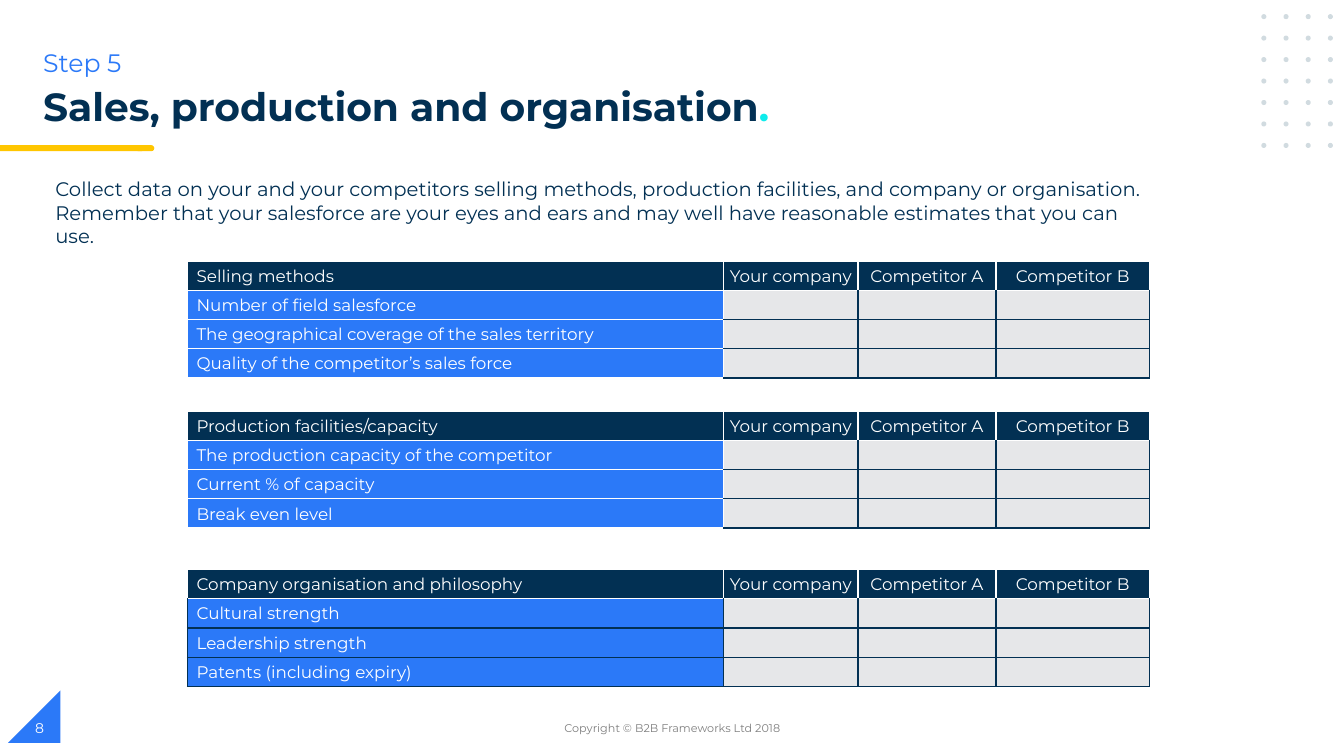
from lxml import etree
from pptx import Presentation
from pptx.dml.color import RGBColor
from pptx.enum import shapes, text
from pptx.oxml import ns
from pptx.util import Inches, Pt

FONT = "Montserrat"
NAVY, BLUE, WHITE, GREY = "023053", "2B79F8", "FFFFFF", "E6E7E9"
YELLOW, CYAN, DOT, FOOTER = "FFC600", "0EECEC", "D1DBE0", "7F7F7F"
COLUMNS = [5.32, 1.33, 1.37, 1.52]
ROW_HEIGHT = 0.29
COMPANIES = ["Your company", "Competitor A", "Competitor B"]


def rgb(colour):
    return RGBColor.from_string(colour)


def add_run(p, words, size, colour, bold=False):
    r = p.add_run()
    r.text = words
    r.font.name, r.font.size, r.font.bold = FONT, Pt(size), bold
    r.font.color.rgb = rgb(colour)


def add_shape(s, kind, x, y, w, h, colour):
    sp = s.shapes.add_shape(kind, Inches(x), Inches(y), Inches(w), Inches(h))
    sp.shadow.inherit = False
    sp.fill.solid()
    sp.fill.fore_color.rgb = rgb(colour)
    sp.line.fill.background()
    return sp


def add_text(s, x, y, w, h, runs, align=text.PP_ALIGN.LEFT,
             anchor=text.MSO_ANCHOR.TOP, spacing=None):
    tf = s.shapes.add_textbox(Inches(x), Inches(y), Inches(w), Inches(h)).text_frame
    tf.word_wrap = True
    tf.vertical_anchor = anchor
    p = tf.paragraphs[0]
    p.alignment = align
    p.line_spacing = spacing
    for run in runs:
        add_run(p, *run)


def add_dots(s, x, y):
    for row in range(7):
        for col in range(4):
            add_shape(s, shapes.MSO_SHAPE.OVAL, x + col * 0.22, y + row * 0.213,
                      0.05, 0.05, DOT)


def add_heading(s, x, y):
    add_text(s, x, y, 1.2, 0.4, [("Step 5", 18, BLUE)])
    add_text(s, x, y + 0.4, 9.08, 0.56,
             [("Sales, production and organisation", 28, NAVY, True),
              (".", 28, CYAN, True)], spacing=0.9)
    # Yellow underline with a rounded end
    add_shape(s, shapes.MSO_SHAPE.FLOWCHART_TERMINATOR, 1.34, y + 1.02, 0.19, 0.06, YELLOW)
    add_shape(s, shapes.MSO_SHAPE.RECTANGLE, 0, y + 1.02, 1.41, 0.06, YELLOW)


def add_footer(s, x, y):
    corner = add_shape(s, shapes.MSO_SHAPE.RIGHT_TRIANGLE, x, y, 0.52, 0.52, BLUE)
    corner._element.spPr.xfrm.set("flipH", "1")
    middle = text.MSO_ANCHOR.MIDDLE
    add_text(s, x + 0.17, y + 0.17, 3, 0.4, [("8", 10, WHITE)], anchor=middle)
    add_text(s, x + 4.34, y + 0.17, 4.5, 0.4,
             [("Copyright © B2B Frameworks Ltd 2018", 8, FOOTER)],
             text.PP_ALIGN.CENTER, middle)


def style_cell(cell, fill, left, right, top, bottom):
    tcPr = cell._tc.get_or_add_tcPr()
    for side, colour in zip("LRTB", (left, right, top, bottom)):
        ln = etree.SubElement(tcPr, ns.qn(f"a:ln{side}"), w="12700")
        solid = etree.SubElement(ln, ns.qn("a:solidFill"))
        etree.SubElement(solid, ns.qn("a:srgbClr"), val=colour)
    cell.fill.solid()
    cell.fill.fore_color.rgb = rgb(fill)
    cell.margin_left = cell.margin_right = cell.margin_top = Inches(0.01)
    cell.margin_bottom = 0
    cell.vertical_anchor = text.MSO_ANCHOR.MIDDLE


def fill_cell(cell, words, is_label):
    p = cell.text_frame.paragraphs[0]
    if not words:
        # Keeps the height of an empty row at that of 12 pt text
        etree.SubElement(p._p, ns.qn("a:endParaRPr"), sz="1200")
        return
    if is_label:
        pPr = p._p.get_or_add_pPr()
        pPr.set("marL", str(Inches(0.08)))
        pPr.set("indent", "0")
    else:
        p.alignment = text.PP_ALIGN.CENTER
    add_run(p, words, 12, WHITE)


def add_comparison(s, x, y, heading, labels, label_edge):
    rows = [[heading] + COMPANIES] + [[label, "", "", ""] for label in labels]
    table = s.shapes.add_table(len(rows), len(COLUMNS), Inches(x), Inches(y),
                               Inches(sum(COLUMNS)),
                               Inches(ROW_HEIGHT * len(rows))).table
    table.first_row = table.horz_banding = False
    for col, width in enumerate(COLUMNS):
        table.columns[col].width = Inches(width)
    for i, row in enumerate(rows):
        table.rows[i].height = Inches(ROW_HEIGHT)
        for j, words in enumerate(row):
            cell = table.cell(i, j)
            fill_cell(cell, words, j == 0)
            if i == 0:
                style_cell(cell, NAVY, WHITE, WHITE, WHITE, WHITE)
                continue
            edge = label_edge if j == 0 else NAVY
            left = label_edge if j <= 1 else NAVY
            top = WHITE if i == 1 else edge
            style_cell(cell, BLUE if j == 0 else GREY, left, edge, top, edge)


def main():
    prs = Presentation()
    prs.slide_width, prs.slide_height = Inches(13.33), Inches(7.5)
    s = prs.slides.add_slide(prs.slide_layouts[6])

    add_dots(s, 12.51, 0.14)
    add_heading(s, 0.33, 0.42)
    add_text(s, 0.45, 1.71, 11.15, 0.8, [(
        "Collect data on your and your competitors selling methods, production "
        "facilities, and company or organisation. Remember that your salesforce "
        "are your eyes and ears and may well have reasonable estimates that you "
        "can use.", 14, NAVY)])

    # Three comparison tables
    add_comparison(s, 1.86, 2.59, "Selling methods",
                   ["Number of field salesforce",
                    "The geographical coverage of the sales territory",
                    "Quality of the competitor’s sales force"], WHITE)
    add_comparison(s, 1.86, 4.08, "Production facilities/capacity",
                   ["The production capacity of the competitor",
                    "Current % of capacity", "Break even level"], WHITE)
    add_comparison(s, 1.86, 5.65, "Company organisation and philosophy",
                   ["Cultural strength", "Leadership strength",
                    "Patents (including expiry)"], NAVY)

    add_footer(s, 0.08, 6.85)
    prs.save("out.pptx")


if __name__ == "__main__":
    main()
